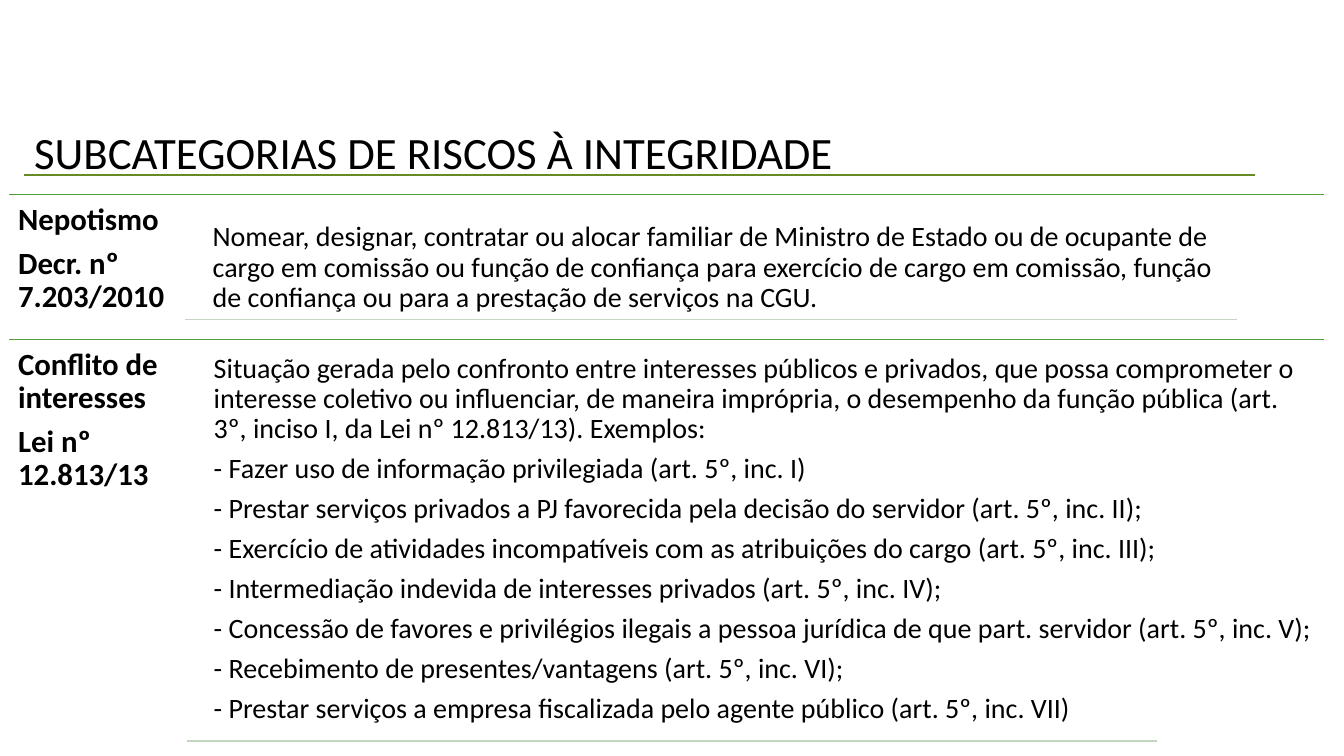
from dataclasses import dataclass

from lxml.etree import SubElement
from pptx import Presentation
from pptx.dml.color import RGBColor
from pptx.enum.shapes import MSO_CONNECTOR
from pptx.enum.text import MSO_ANCHOR, MSO_AUTO_SIZE
from pptx.oxml.ns import qn
from pptx.slide import Slide
from pptx.util import Pt


@dataclass(frozen=True)
class Theme:
    font: str = "Calibri"
    text: RGBColor = RGBColor(0x00, 0x00, 0x00)
    title_rule: RGBColor = RGBColor(0x67, 0x8A, 0x26)
    row_rule: RGBColor = RGBColor(0x54, 0x9E, 0x39)
    pale_rule: RGBColor = RGBColor(0xC3, 0xD6, 0xBF)
    title_size: float = 32
    label_size: float = 22
    body_size: float = 20


@dataclass(frozen=True)
class TextBlock:
    left: float
    top: float
    width: float
    height: float
    paragraphs: tuple[str, ...]
    size: float
    bold: bool = False
    inset: float = 5.76
    line_spacing: float = 0.9
    space_after_ratio: float = 0.35


@dataclass(frozen=True)
class Rule:
    left: float
    right: float
    y: float
    color: RGBColor
    width: float = 1


@dataclass(frozen=True)
class RiskRow:
    label: TextBlock
    body: TextBlock
    closing_rule: Rule


THEME = Theme()
ROW_LEFT, ROW_RIGHT = 6.48, 946.08
LABEL_INSET = 6.48

TITLE = TextBlock(17.28, 85.68, 879.12, 46.08, ("SUBCATEGORIAS DE RISCOS À INTEGRIDADE",),
                  THEME.title_size, inset=7.2, line_spacing=1, space_after_ratio=0)
TITLE_RULE = Rule(17.28, 896.4, 124.9, THEME.title_rule, 1.5)

ROWS = (
    RiskRow(
        TextBlock(ROW_LEFT, 138.96, 125.28, 61.2, ("Nepotismo", "Decr. nº 7.203/2010"),
                  THEME.label_size, True, LABEL_INSET),
        TextBlock(146.16, 153.36, 737.28, 74.16, (
            "Nomear, designar, contratar ou alocar familiar de Ministro de Estado ou de ocupante de "
            "cargo em comissão ou função de confiança para exercício de cargo em comissão, função "
            "de confiança ou para a prestação de serviços na CGU.",
        ), THEME.body_size),
        Rule(132.48, 883.44, 228.24, THEME.pale_rule),
    ),
    RiskRow(
        TextBlock(ROW_LEFT, 242.64, 127.44, 290.88, ("Conflito de interesses", "Lei nº 12.813/13"),
                  THEME.label_size, True, LABEL_INSET),
        TextBlock(146.88, 246.96, 797.76, 281.52, (
            "Situação gerada pelo confronto entre interesses públicos e privados, que possa "
            "comprometer o interesse coletivo ou influenciar, de maneira imprópria, o desempenho "
            "da função pública (art. 3º, inciso I, da Lei nº 12.813/13). Exemplos:",
            "- Fazer uso de informação privilegiada (art. 5º, inc. I)",
            "- Prestar serviços privados a PJ favorecida pela decisão do servidor (art. 5º, inc. II);",
            "- Exercício de atividades incompatíveis com as atribuições do cargo (art. 5º, inc. III);",
            "- Intermediação indevida de interesses privados (art. 5º, inc. IV);",
            "- Concessão de favores e privilégios ilegais a pessoa jurídica de que part. servidor "
            "(art. 5º, inc. V);",
            "- Recebimento de presentes/vantagens (art. 5º, inc. VI);",
            "- Prestar serviços a empresa fiscalizada pelo agente público (art. 5º, inc. VII)",
        ), THEME.body_size),
        Rule(133.92, 826.56, 529.2, THEME.pale_rule),
    ),
)


def apply_format(target: object, values: dict[str, object]) -> None:
    for name, value in values.items():
        setattr(target, name, value)


def draw_text(slide: Slide, block: TextBlock) -> None:
    shape = slide.shapes.add_textbox(
        Pt(block.left), Pt(block.top), Pt(block.width), Pt(block.height))
    frame = shape.text_frame
    apply_format(frame, {
        "word_wrap": True,
        "auto_size": MSO_AUTO_SIZE.NONE,
        "vertical_anchor": MSO_ANCHOR.TOP,
        "margin_left": Pt(block.inset),
        "margin_right": Pt(block.inset),
        "margin_top": Pt(block.inset if block is not TITLE else 3.6),
        "margin_bottom": Pt(block.inset if block is not TITLE else 3.6),
    })
    for index, text in enumerate(block.paragraphs):
        paragraph = frame.add_paragraph() if index else frame.paragraphs[0]
        apply_format(paragraph, {
            "line_spacing": block.line_spacing,
            "space_after": Pt(block.size * block.space_after_ratio),
        })
        run = paragraph.add_run()
        run.text = text
        apply_format(run.font, {"name": THEME.font, "size": Pt(block.size), "bold": block.bold})
        run.font.color.rgb = THEME.text


def draw_rule(slide: Slide, rule: Rule) -> None:
    connector = slide.shapes.add_connector(
        MSO_CONNECTOR.STRAIGHT, Pt(rule.left), Pt(rule.y), Pt(rule.right), Pt(rule.y))
    connector.line.color.rgb = rule.color
    connector.line.width = Pt(rule.width)
    # An empty effect list removes the shadow
    SubElement(connector._element.spPr, qn("a:effectLst"))


def draw_row(slide: Slide, row: RiskRow) -> None:
    draw_rule(slide, Rule(ROW_LEFT, ROW_RIGHT, row.label.top, THEME.row_rule))
    draw_text(slide, row.label)
    draw_text(slide, row.body)
    draw_rule(slide, row.closing_rule)


def main() -> None:
    presentation = Presentation()
    presentation.slide_width = Pt(960)
    presentation.slide_height = Pt(540)
    slide = presentation.slides.add_slide(presentation.slide_layouts[6])

    # Risk subcategories
    for row in ROWS:
        draw_row(slide, row)

    # Title and its underline
    draw_text(slide, TITLE)
    draw_rule(slide, TITLE_RULE)

    presentation.save("out.pptx")


if __name__ == "__main__":
    main()
